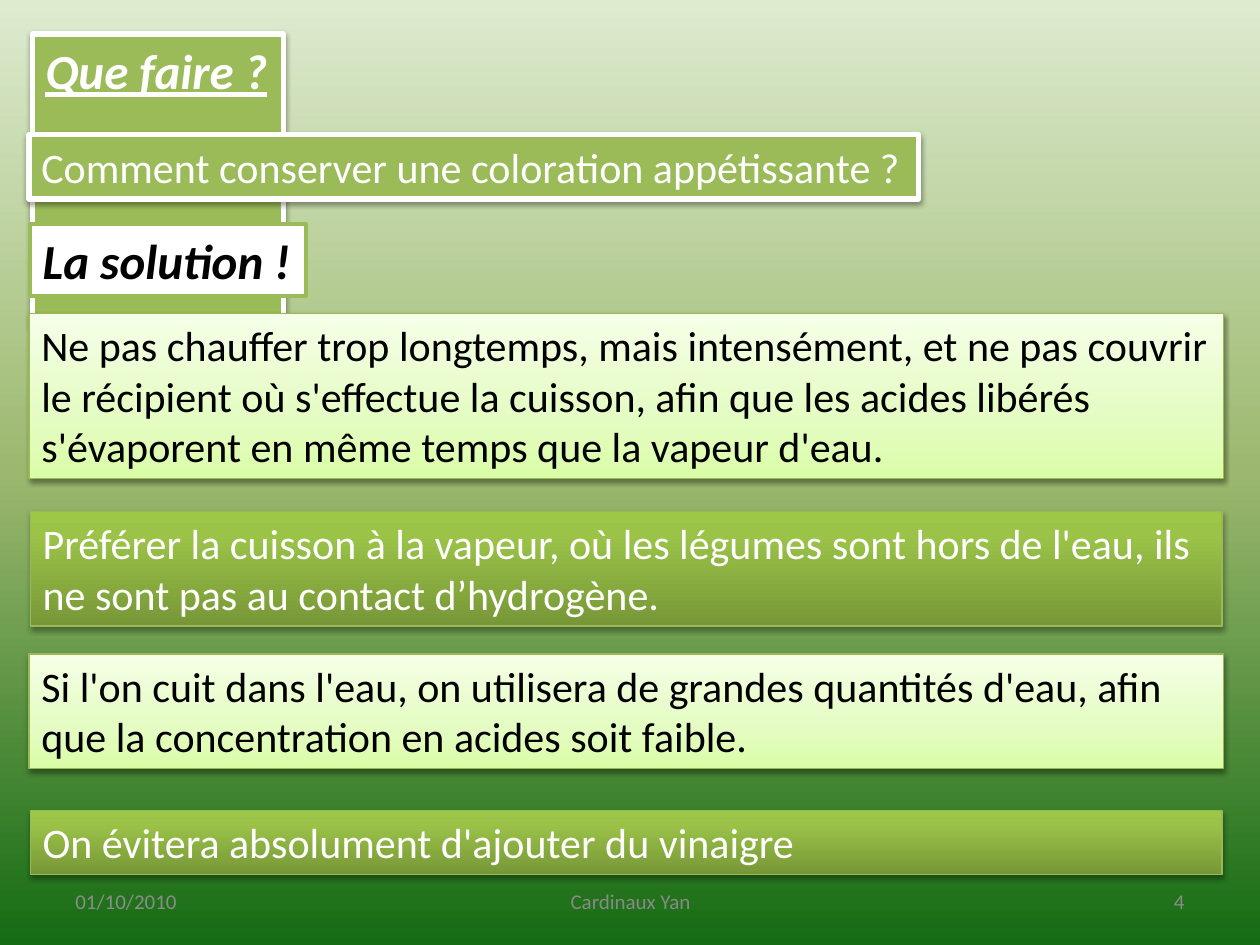
from dataclasses import dataclass

from pptx import Presentation
from pptx.dml.color import RGBColor
from pptx.enum.shapes import MSO_SHAPE
from pptx.enum.text import MSO_ANCHOR, MSO_AUTO_SIZE, PP_ALIGN
from pptx.oxml import parse_xml
from pptx.oxml.ns import nsdecls, qn
from pptx.util import Inches, Pt


@dataclass(frozen=True)
class Theme:
    font: str = "Calibri"
    head: int = 28
    body: int = 24
    foot: int = 12
    white: str = "FFFFFF"
    black: str = "000000"
    green: str = "9BBB59"
    edge: str = "98B955"
    gray: str = "8C8C8C"
    mid: str = "898989"
    back: tuple = ((0, "DDEBCF"), (50, "9CB86E"), (100, "156B13"))
    pale: tuple = ((0, "DAFDA7"), (35, "E4FCC2"), (100, "F5FFE7"))
    deep: tuple = ((0, "779737"), (80, "9BC348"), (100, "9DC746"))


THEME = Theme()


def blend(fill, node, stops, angle):
    fill.gradient()
    grad = next(node.iter(qn("a:gradFill")))
    for child in list(grad):
        grad.remove(child)
    marks = "".join(
        f'<a:gs pos="{place * 1000}"><a:srgbClr val="{color}"/></a:gs>'
        for place, color in stops
    )
    grad.append(parse_xml(f'<a:gsLst {nsdecls("a")}>{marks}</a:gsLst>'))
    grad.append(parse_xml(f'<a:lin {nsdecls("a")} ang="{angle * 60000}" scaled="0"/>'))


def place(shape, box):
    shape.left, shape.top, shape.width, shape.height = map(Inches, box)


def write(shape, text, size, color, align=PP_ALIGN.LEFT):
    frame = shape.text_frame
    frame.text = text
    para = frame.paragraphs[0]
    para.alignment = align
    font = para.runs[0].font
    font.name = THEME.font
    font.size = Pt(size)
    font.color.rgb = RGBColor.from_string(color)
    return font


def style(shape, fill, edge, width):
    if isinstance(fill, tuple):
        blend(shape.fill, shape._element.spPr, fill, 270)
    else:
        shape.fill.solid()
        shape.fill.fore_color.rgb = RGBColor.from_string(fill)
    shape.line.color.rgb = RGBColor.from_string(edge)
    shape.line.width = Pt(width)
    shape.shadow.inherit = False
    frame = shape.text_frame
    frame.vertical_anchor = MSO_ANCHOR.TOP
    frame.word_wrap = True
    frame.auto_size = MSO_AUTO_SIZE.SHAPE_TO_FIT_TEXT


def shade(shape, alpha=38, gap=1.6):
    effects = shape._element.spPr.find(qn("a:effectLst"))
    effects.append(parse_xml(
        f'<a:outerShdw {nsdecls("a")} blurRad="{Pt(3.1)}" dist="{Pt(gap)}" '
        f'dir="5400000" rotWithShape="0"><a:srgbClr val="{THEME.black}">'
        f'<a:alpha val="{alpha * 1000}"/></a:srgbClr></a:outerShdw>'
    ))


def add_box(slide, box, text, fill, color, edge, width, size=THEME.body):
    shape = slide.shapes.add_shape(MSO_SHAPE.RECTANGLE, *map(Inches, box))
    style(shape, fill, edge, width)
    return shape, write(shape, text, size, color)


def add_title(slide, box, text):
    title = slide.shapes.title
    place(title, box)
    style(title, THEME.green, THEME.white, 3)
    title.text_frame.word_wrap = False
    shade(title)
    font = write(title, text, THEME.head, THEME.white)
    font.bold = font.italic = font.underline = True


def add_label(slide, box, text):
    shape, font = add_box(slide, box, text, THEME.white, THEME.black,
                          THEME.green, 2, THEME.head)
    shape.text_frame.word_wrap = False
    font.bold = font.italic = True


def add_pale(slide, top, height, text):
    shape, _ = add_box(slide, (0.23, top, 9.48, height), text, THEME.pale,
                       THEME.black, THEME.edge, 0.75)
    shade(shape)


def add_deep(slide, top, height, text):
    shape, _ = add_box(slide, (0.24, top, 9.46, height), text, THEME.deep,
                       THEME.white, THEME.edge, 0.75)
    shade(shape, 35, 1.8)


def add_foot(slide, left, width, text, color, align):
    shape = slide.shapes.add_textbox(*map(Inches, (left, 6.95, width, 0.4)))
    shape.text_frame.word_wrap = True
    shape.text_frame.vertical_anchor = MSO_ANCHOR.MIDDLE
    write(shape, text, THEME.foot, color, align)


def main():
    deck = Presentation()
    deck.slide_width, deck.slide_height = Inches(10), Inches(7.5)
    slide = deck.slides.add_slide(deck.slide_layouts[5])
    blend(slide.background.fill, slide._element, THEME.back, 90)

    add_title(slide, (0.26, 0.27, 1.99, 0.57), "Que faire ?")
    ask, _ = add_box(slide, (0.23, 1.07, 7.06, 0.51),
                     "Comment conserver une coloration appétissante ?",
                     THEME.green, THEME.white, THEME.white, 3)
    shade(ask)
    add_label(slide, (0.24, 1.78, 2.19, 0.57), "La solution !")

    add_pale(slide, 2.49, 1.31,
             "Ne pas chauffer trop longtemps, mais intensément, et ne pas couvrir "
             "le récipient où s'effectue la cuisson, afin que les acides libérés "
             "s'évaporent en même temps que la vapeur d'eau.")
    add_deep(slide, 4.06, 0.91,
             "Préférer la cuisson à la vapeur, où les légumes sont hors de l'eau, "
             "ils ne sont pas au contact d’hydrogène.")
    add_pale(slide, 5.19, 0.91,
             "Si l'on cuit dans l'eau, on utilisera de grandes quantités d'eau, "
             "afin que la concentration en acides soit faible.")
    add_deep(slide, 6.43, 0.51, "On évitera absolument d'ajouter du vinaigre")

    add_foot(slide, 0.5, 2.33, "01/10/2010", THEME.gray, PP_ALIGN.LEFT)
    add_foot(slide, 3.42, 3.17, "Cardinaux Yan", THEME.mid, PP_ALIGN.CENTER)
    add_foot(slide, 7.17, 2.33, "4", THEME.gray, PP_ALIGN.RIGHT)
    deck.save("out.pptx")


if __name__ == "__main__":
    main()
